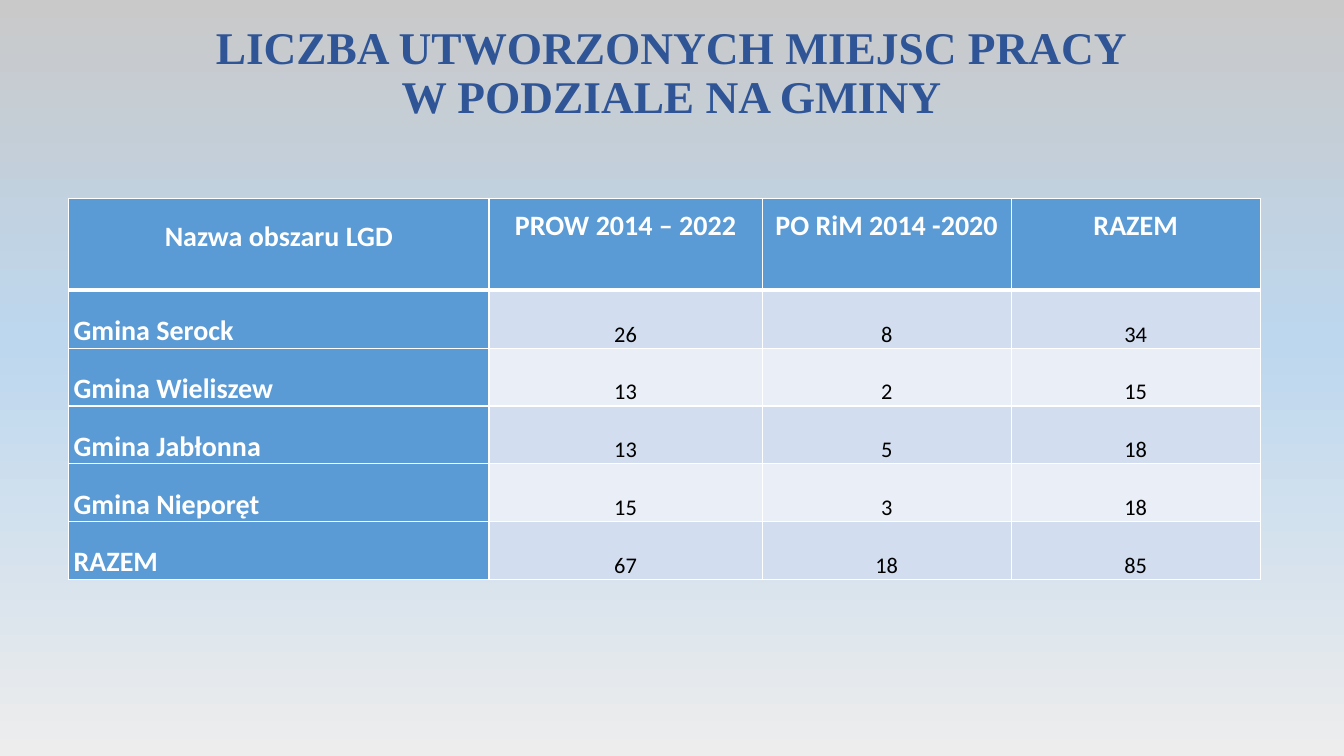
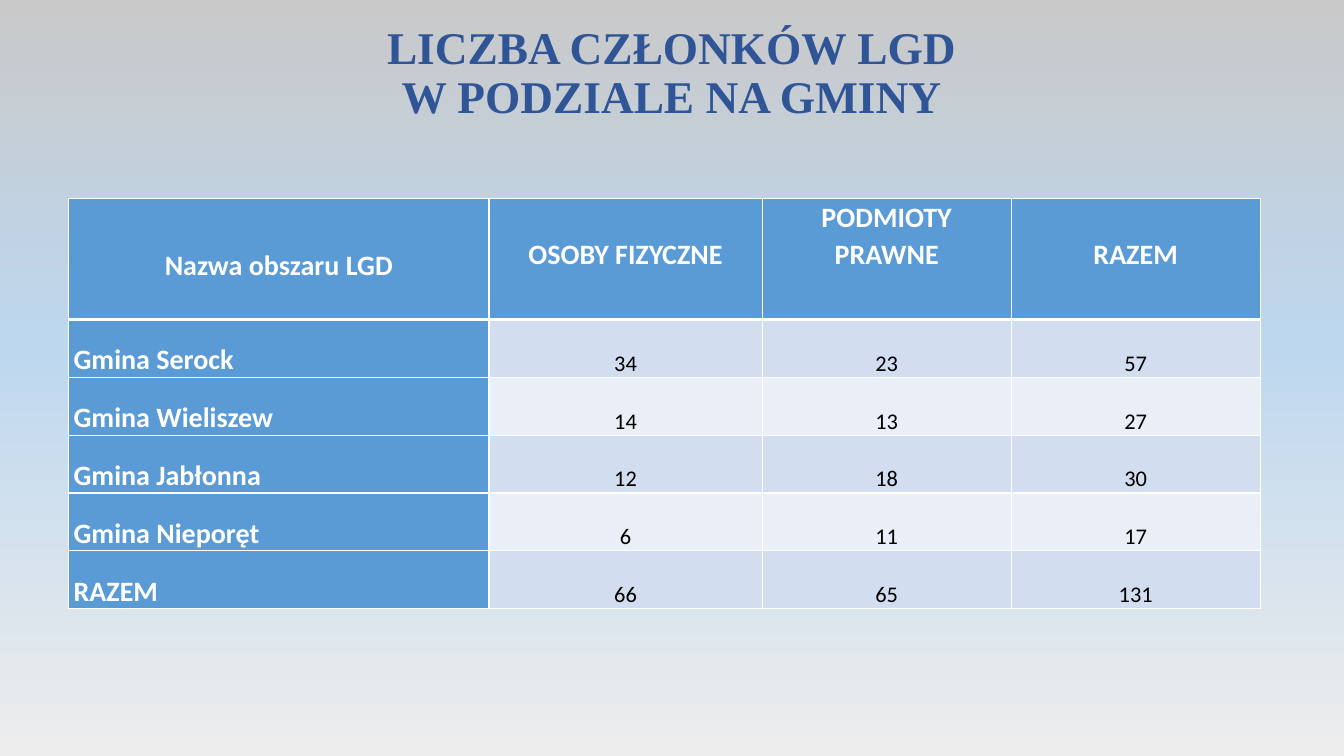
from copy import deepcopy

from lxml.etree import SubElement
from pptx import Presentation
from pptx.dml.color import RGBColor
from pptx.enum.text import MSO_ANCHOR, PP_ALIGN
from pptx.oxml.ns import qn
from pptx.util import Inches, Pt

TITLE_FONT, TABLE_FONT = "Times New Roman", "Calibri"
TITLE_BLUE, HEAD_BLUE = "2F5597", "5B9BD5"
WHITE, BLACK = "FFFFFF", "000000"
BANDS = ("D2DEEF", "EAEFF7")
BACKDROP = ((0, "EDEDED"), (0.55, "BDD7EE"), (1, "C9C9C9"))
TITLE_BOX = (0.44, 0.25, 12.44, 0.98)
TABLE_POS = (0.68, 1.97)
COL_WIDTHS = (4.17, 2.71, 2.47, 2.47)
BODY_HEIGHT = 2.87
AREAS = ("Gmina Serock", "Gmina Wieliszew", "Gmina Jabłonna", "Gmina Nieporęt", "RAZEM")
SLIDES = (
    (("LICZBA UTWORZONYCH MIEJSC PRACY", "W PODZIALE NA GMINY"), 0.91,
     ("Nazwa obszaru LGD", "PROW 2014 – 2022", "PO RiM 2014 -2020", "RAZEM"),
     ((26, 8, 34), (13, 2, 15), (13, 5, 18), (15, 3, 18), (67, 18, 85))),
    (("LICZBA CZŁONKÓW LGD", "W PODZIALE NA GMINY"), 1.2,
     ("Nazwa obszaru LGD", "OSOBY FIZYCZNE", "PODMIOTY PRAWNE", "RAZEM"),
     ((34, 23, 57), (14, 13, 27), (12, 18, 30), (6, 11, 17), (66, 65, 131))),
)


def color(hex_string):
    """Turn a hex string into a colour."""
    return RGBColor.from_string(hex_string)


def set_backdrop(master):
    """Give the master a vertical three-colour gradient."""
    fill = master.background.fill
    fill.gradient()
    fill.gradient_angle = 90
    stops = master.element.find(".//" + qn("a:gsLst"))
    stops.append(deepcopy(stops[-1]))
    for stop, (position, shade) in zip(fill.gradient_stops, BACKDROP):
        stop.position = position
        stop.color.rgb = color(shade)


def add_run(p, text, font, size, shade, bold):
    """Add one formatted run to a paragraph."""
    r = p.add_run()
    r.text = text
    r.font.name = font
    r.font.size = Pt(size)
    r.font.bold = bold
    r.font.color.rgb = color(shade)


def add_title(s, lines, box):
    """Place the centred title lines in the box."""
    tf = s.shapes.add_textbox(*map(Inches, box)).text_frame
    tf.word_wrap = True
    tf.vertical_anchor = MSO_ANCHOR.MIDDLE
    p = tf.paragraphs[0]
    p.alignment = PP_ALIGN.CENTER
    p.line_spacing = 0.9
    for i, line in enumerate(lines):
        if i:
            p.add_line_break()
        add_run(p, line, TITLE_FONT, 32.4, TITLE_BLUE, True)


def set_borders(cell, top, bottom):
    """Draw white borders, with the given top and bottom widths."""
    tc_pr = cell._tc.get_or_add_tcPr()
    for side, width in (("L", 1), ("R", 1), ("T", top), ("B", bottom)):
        ln = SubElement(tc_pr, qn(f"a:ln{side}"), w=str(Pt(width)))
        fill = SubElement(ln, qn("a:solidFill"))
        SubElement(fill, qn("a:srgbClr"), val=WHITE)


def fill_cell(cell, text, row, col):
    """Write and style one cell according to its row and column."""
    head, label = row == 0, row == 0 or col == 0
    set_borders(cell, 3 if row == 1 else 1, 3 if head else 1)
    cell.fill.solid()
    cell.fill.fore_color.rgb = color(HEAD_BLUE if label else BANDS[(row - 1) % 2])
    cell.vertical_anchor = MSO_ANCHOR.BOTTOM
    cell.margin_left = cell.margin_right = Inches(0.05)
    cell.margin_top = 0
    cell.margin_bottom = Inches((0.47 if col else 0.36) if head else 0)
    p = cell.text_frame.paragraphs[0]
    p.alignment = PP_ALIGN.CENTER if head or col else PP_ALIGN.LEFT
    p.line_spacing = 1.07
    add_run(p, text, TABLE_FONT, 20 if label else 16, WHITE if label else BLACK, label)


def add_area_table(s, pos, head_height, headers, values):
    """Place the table of areas with its top left corner at pos."""
    rows = [headers] + [(area, *map(str, nums)) for area, nums in zip(AREAS, values)]
    size = (sum(COL_WIDTHS), head_height + BODY_HEIGHT)
    frame = s.shapes.add_table(len(rows), len(headers), *map(Inches, pos + size))
    table = frame.table
    for column, width in zip(table.columns, COL_WIDTHS):
        column.width = Inches(width)
    for i, texts in enumerate(rows):
        table.rows[i].height = Inches(BODY_HEIGHT / len(AREAS) if i else head_height)
        for j, text in enumerate(texts):
            fill_cell(table.cell(i, j), text, i, j)


def main():
    """Build and save the presentation."""
    prs = Presentation()
    prs.slide_width, prs.slide_height = Inches(13.33), Inches(7.5)
    set_backdrop(prs.slide_master)
    for title, head_height, headers, values in SLIDES:
        s = prs.slides.add_slide(prs.slide_layouts[6])
        add_title(s, title, TITLE_BOX)
        add_area_table(s, TABLE_POS, head_height, headers, values)
    prs.save("out.pptx")


if __name__ == "__main__":
    main()
